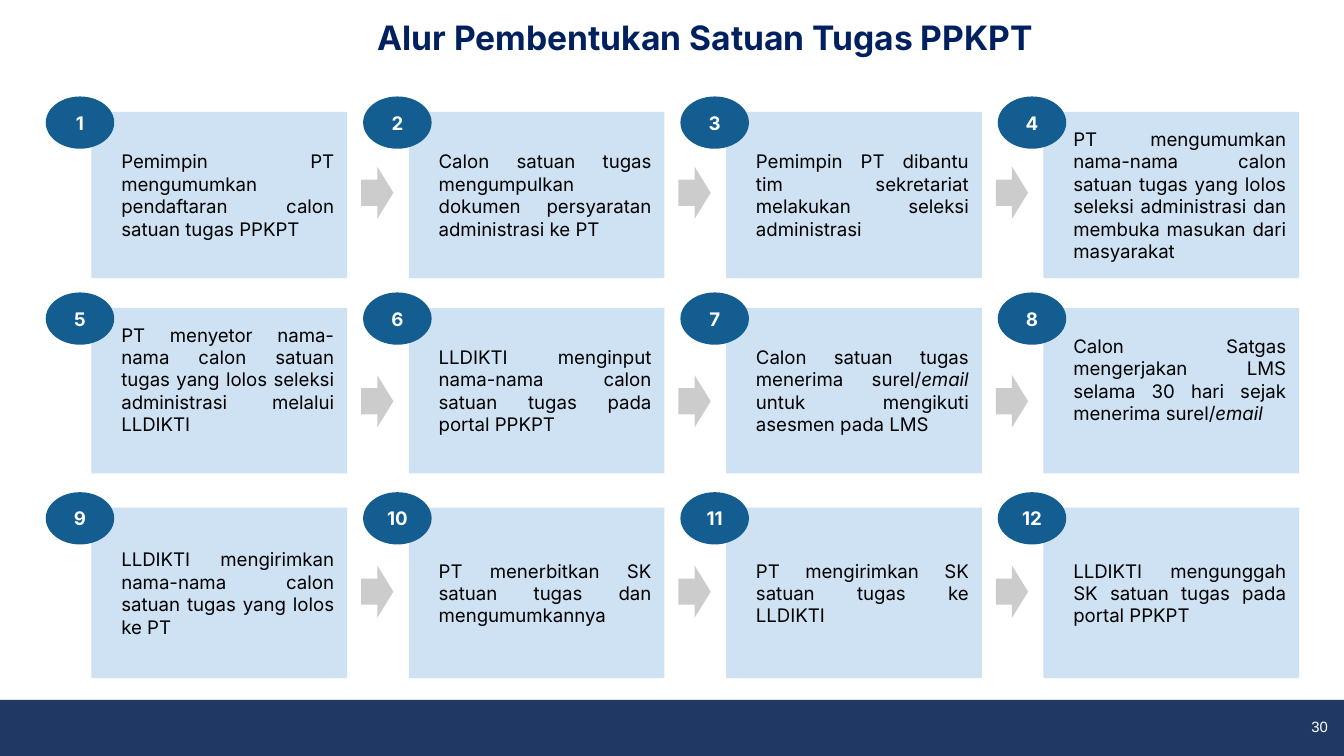
from dataclasses import dataclass

from pptx import Presentation
from pptx.dml.color import RGBColor
from pptx.enum.shapes import MSO_SHAPE
from pptx.enum.text import MSO_ANCHOR, MSO_AUTO_SIZE, PP_ALIGN
from pptx.util import Pt

# Content: each step is a list of (text, italic) runs
TITLE = "Alur Pembentukan Satuan Tugas PPKPT"
PAGE_NUMBER = "30"
STEPS = [
    [("Pemimpin PT mengumumkan pendaftaran calon satuan tugas PPKPT", False)],
    [("Calon satuan tugas mengumpulkan dokumen persyaratan administrasi ke PT", False)],
    [("Pemimpin PT dibantu tim sekretariat melakukan seleksi administrasi", False)],
    [("PT mengumumkan nama-nama calon satuan tugas yang lolos seleksi administrasi "
      "dan membuka masukan dari masyarakat", False)],
    [("PT menyetor nama-nama calon satuan tugas yang lolos seleksi administrasi "
      "melalui LLDIKTI", False)],
    [("LLDIKTI menginput nama-nama calon satuan tugas pada portal PPKPT", False)],
    [("Calon satuan tugas menerima surel/", False), ("email", True),
     (" untuk mengikuti asesmen pada LMS", False)],
    [("Calon Satgas mengerjakan LMS selama 30 hari sejak menerima surel/", False),
     ("email", True)],
    [("LLDIKTI mengirimkan nama-nama calon satuan tugas yang lolos ke PT", False)],
    [("PT menerbitkan SK satuan tugas dan mengumumkannya", False)],
    [("PT mengirimkan SK satuan tugas ke LLDIKTI", False)],
    [("LLDIKTI mengunggah SK satuan tugas pada portal PPKPT", False)],
]
RAISED_STEPS = {5, 8}  # text sits a little above the middle


@dataclass(frozen=True)
class Theme:
    font: str = "Inter"
    number_font: str = "Arial"
    title: str = "002060"
    footer: str = "1F3864"
    card: str = "CFE2F3"
    badge: str = "135D91"
    arrow: str = "CCCCCC"
    dark: str = "000000"
    light: str = "FFFFFF"
    title_size: float = 18
    body_size: float = 10
    number_size: float = 8


THEME = Theme()

# Grid, in points
COLUMNS = 4
FIRST_LEFT, COLUMN_PITCH, CARD_WIDTH = 49, 170, 137
ROWS = [  # card top, card height, arrow top
    (60, 89, 89.3),
    (165, 88.6, 201),
    (272, 91.4, 303),
]
BADGE_WIDTH, BADGE_HEIGHT, BADGE_LEFT, BADGE_RISE = 36.7, 28, 24.5, 8.3
ARROW_WIDTH, ARROW_HEIGHT, ARROW_OFFSET = 17.3, 28, 144.5
INSET = 7.2


def add_filled(slide, kind, left, top, width, height, color):
    shape = slide.shapes.add_shape(kind, Pt(left), Pt(top), Pt(width), Pt(height))
    shape.shadow.inherit = False
    shape.fill.solid()
    shape.fill.fore_color.rgb = RGBColor.from_string(color)
    shape.line.fill.background()
    return shape


def write(shape, runs, size, color, align, bold=False, font=THEME.font,
          insets=(INSET,) * 4, anchor=MSO_ANCHOR.MIDDLE):
    frame = shape.text_frame
    frame.word_wrap = True
    frame.auto_size = MSO_AUTO_SIZE.NONE
    frame.vertical_anchor = anchor
    (frame.margin_left, frame.margin_top,
     frame.margin_right, frame.margin_bottom) = map(Pt, insets)
    paragraph = frame.paragraphs[0]
    paragraph.alignment = align
    for text, italic in runs:
        run = paragraph.add_run()
        run.text = text
        run.font.name = font
        run.font.size = Pt(size)
        run.font.bold = bold
        run.font.italic = italic
        run.font.color.rgb = RGBColor.from_string(color)


def add_footer(slide):
    add_filled(slide, MSO_SHAPE.RECTANGLE, 0, 375, 720, 30, THEME.footer)
    number = slide.shapes.add_textbox(Pt(669.6), Pt(382.3), Pt(46.8), Pt(14.4))
    write(number, [(PAGE_NUMBER, False)], THEME.number_size, THEME.light,
          PP_ALIGN.RIGHT, font=THEME.number_font, insets=(5, 3, 5, 3))


def add_title(slide):
    title = slide.shapes.title
    title.left, title.top, title.width, title.height = Pt(0), Pt(2), Pt(720), Pt(36)
    write(title, [(TITLE, False)], THEME.title_size, THEME.title, PP_ALIGN.CENTER,
          bold=True, insets=(43.2, INSET, INSET, INSET), anchor=MSO_ANCHOR.TOP)


def add_step(slide, number, runs):
    row, column = divmod(number - 1, COLUMNS)
    top, height, arrow_top = ROWS[row]
    left = FIRST_LEFT + column * COLUMN_PITCH

    # Card
    card = add_filled(slide, MSO_SHAPE.RECTANGLE, left, top, CARD_WIDTH, height, THEME.card)
    bottom = INSET + (12 if number in RAISED_STEPS else 0)
    write(card, runs, THEME.body_size, THEME.dark, PP_ALIGN.JUSTIFY,
          insets=(16, INSET, INSET, bottom))

    # Arrow to the next card in the row
    if column < COLUMNS - 1:
        add_filled(slide, MSO_SHAPE.RIGHT_ARROW, left + ARROW_OFFSET, arrow_top,
                   ARROW_WIDTH, ARROW_HEIGHT, THEME.arrow)

    # Number badge
    badge = add_filled(slide, MSO_SHAPE.OVAL, left - BADGE_LEFT, top - BADGE_RISE,
                       BADGE_WIDTH, BADGE_HEIGHT, THEME.badge)
    write(badge, [(str(number), False)], THEME.body_size, THEME.light,
          PP_ALIGN.CENTER, bold=True, insets=(0, 0, 0, 0))


def main():
    presentation = Presentation()
    presentation.slide_width, presentation.slide_height = Pt(720), Pt(405)
    slide = presentation.slides.add_slide(presentation.slide_layouts[5])
    add_footer(slide)
    add_title(slide)
    for number, runs in enumerate(STEPS, start=1):
        add_step(slide, number, runs)
    presentation.save("out.pptx")


if __name__ == "__main__":
    main()
